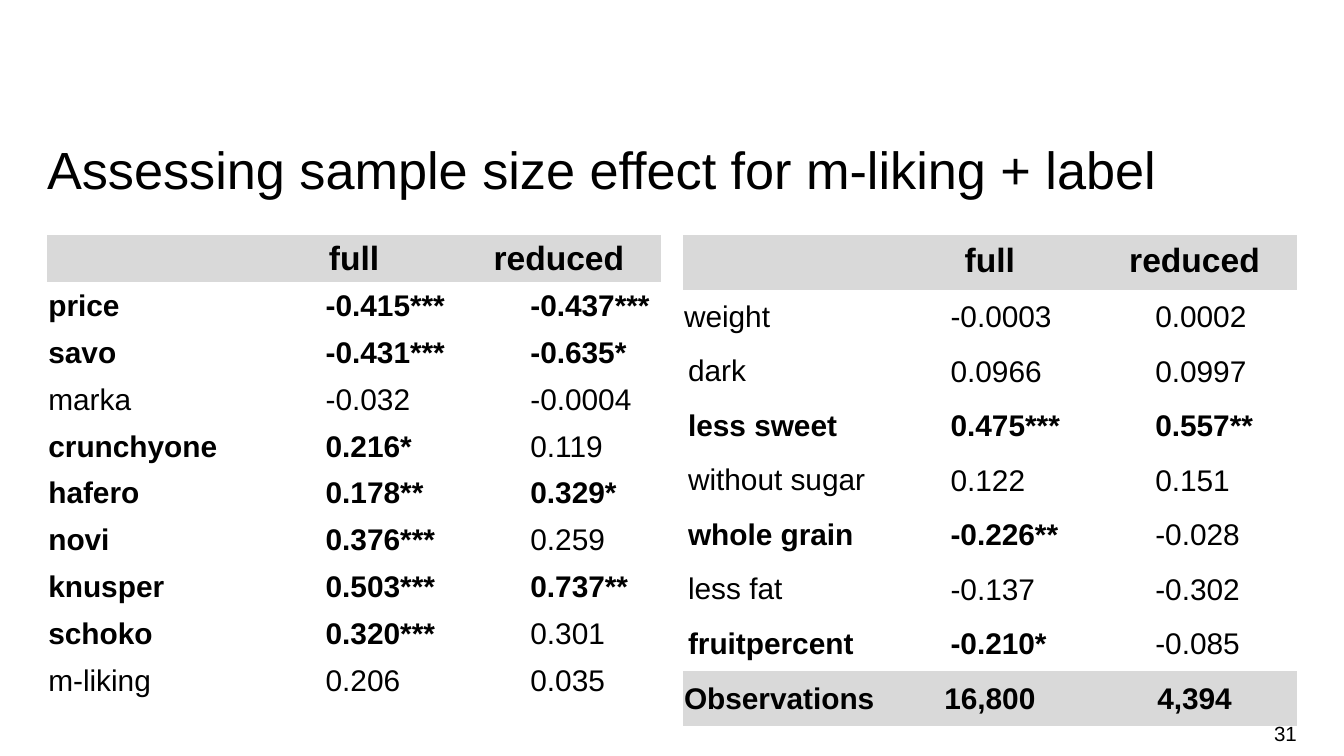
from pptx import Presentation
from pptx.dml.color import RGBColor
from pptx.enum.text import MSO_ANCHOR, MSO_AUTO_SIZE, PP_ALIGN
from pptx.util import Inches, Pt

# Content
TITLE = "Assessing sample size effect for m-liking + label"
PAGE = "31"
HEADER = ("", "full", "reduced")
BRAND_ROWS = [
    ("price", "-0.415***", "-0.437***"),
    ("savo", "-0.431***", "-0.635*"),
    ("marka", "-0.032", "-0.0004"),
    ("crunchyone", "0.216*", "0.119"),
    ("hafero", "0.178**", "0.329*"),
    ("novi", "0.376***", "0.259"),
    ("knusper", "0.503***", "0.737**"),
    ("schoko", "0.320***", "0.301"),
    ("m-liking", "0.206", "0.035"),
]
PRODUCT_ROWS = [
    ("weight", "-0.0003", "0.0002"),
    ("dark", "0.0966", "0.0997"),
    ("less sweet", "0.475***", "0.557**"),
    ("without sugar", "0.122", "0.151"),
    ("whole grain", "-0.226**", "-0.028"),
    ("less fat", "-0.137", "-0.302"),
    ("fruitpercent", "-0.210*", "-0.085"),
]
TOTAL = ("Observations", "16,800", "4,394")

# Look
SLIDE_WIDTH = 10
SLIDE_HEIGHT = SLIDE_WIDTH * 9 / 16
BLACK = RGBColor(0x00, 0x00, 0x00)
GRAY = RGBColor(0xD9, 0xD9, 0xD9)
NO_GRID = "{2D5ABB26-0587-4C30-8999-92F81FD0307C}"
TIGHT = (0.01, 0.01, 0.01, 0)
EVEN = (0.04, 0.04, 0.04, 0.04)
TABLE_TOP, TABLE_WIDTH = 1.75, 4.57
PRODUCT_TABLE = dict(
    left=5.08, height=3.65, indent=0.47, header_inset=(0.1, 0.05, 0.1, 0.05),
    header_anchor=MSO_ANCHOR.TOP, label_inset=EVEN, rows=PRODUCT_ROWS, total=TOTAL)
BRAND_TABLE = dict(
    left=0.35, height=3.49, indent=0.55, header_inset=TIGHT,
    header_anchor=MSO_ANCHOR.MIDDLE, label_inset=TIGHT, rows=BRAND_ROWS, total=None)


def set_insets(box, insets):
    for side, value in zip(("left", "top", "right", "bottom"), insets):
        setattr(box, f"margin_{side}", Inches(value))


def write(p, text, size, bold=False, align=PP_ALIGN.LEFT):
    p.alignment = align
    if text:
        p.add_run().text = text
    font = p.runs[0].font if text else p.font
    for name, value in dict(name="Arial", size=Pt(size), bold=bold).items():
        setattr(font, name, value)
    font.color.rgb = BLACK


def add_results(s, left, height, indent, header_inset, header_anchor,
                label_inset, rows, total):
    lines = [HEADER, *rows] + ([total] if total else [])
    frame = s.shapes.add_table(len(lines), len(HEADER), Inches(left), Inches(TABLE_TOP),
                               Inches(TABLE_WIDTH), Inches(height))
    table = frame.table
    table.first_row = table.horz_banding = False
    table._tbl.tblPr[0].text = NO_GRID
    for row in table.rows:
        row.height = Inches(height / len(lines))

    for i, line in enumerate(lines):
        is_header, is_total = i == 0, line is total
        shaded = is_header or is_total
        for j, text in enumerate(line):
            cell = table.cell(i, j)
            if shaded:
                cell.fill.solid()
                cell.fill.fore_color.rgb = GRAY
            else:
                cell.fill.background()
            cell.vertical_anchor = header_anchor if is_header else MSO_ANCHOR.MIDDLE

            if is_header:
                insets = header_inset
            elif is_total or (i == 1 and j == 0):
                insets = TIGHT
            elif j == 0:
                insets = label_inset
            else:
                insets = (indent, 0.01, 0.01, 0)
            set_insets(cell, insets)

            # Significant values are bold; a label follows its full-sample value
            bold = shaded or "*" in line[max(j, 1)]
            centered = is_header or (is_total and j > 0)
            write(cell.text_frame.paragraphs[0], text, 18 if is_header else 16, bold,
                  PP_ALIGN.CENTER if centered else PP_ALIGN.LEFT)


prs = Presentation()
prs.slide_width, prs.slide_height = Inches(SLIDE_WIDTH), Inches(SLIDE_HEIGHT)
s = prs.slides.add_slide(prs.slide_layouts[5])

# Title
sp = s.shapes.title
sp.left, sp.top, sp.width, sp.height = map(Inches, (0.35, 1.04, 9.29, 0.45))
tf = sp.text_frame
set_insets(tf, (0, 0, 0, 0))
tf.word_wrap = True
tf.auto_size = MSO_AUTO_SIZE.SHAPE_TO_FIT_TEXT
tf.vertical_anchor = MSO_ANCHOR.TOP
write(tf.paragraphs[0], TITLE, 28)
tf.paragraphs[0].line_spacing = Pt(32)

# Result tables
for options in (PRODUCT_TABLE, BRAND_TABLE):
    add_results(s, **options)

# Page number
sp = s.shapes.add_textbox(*map(Inches, (7.41, 5.31, 2.24, 0.3)))
tf = sp.text_frame
set_insets(tf, (0, 0.05, 0, 0.05))
tf.word_wrap = True
tf.vertical_anchor = MSO_ANCHOR.MIDDLE
write(tf.paragraphs[0], PAGE, 11, align=PP_ALIGN.RIGHT)

prs.save("out.pptx")
